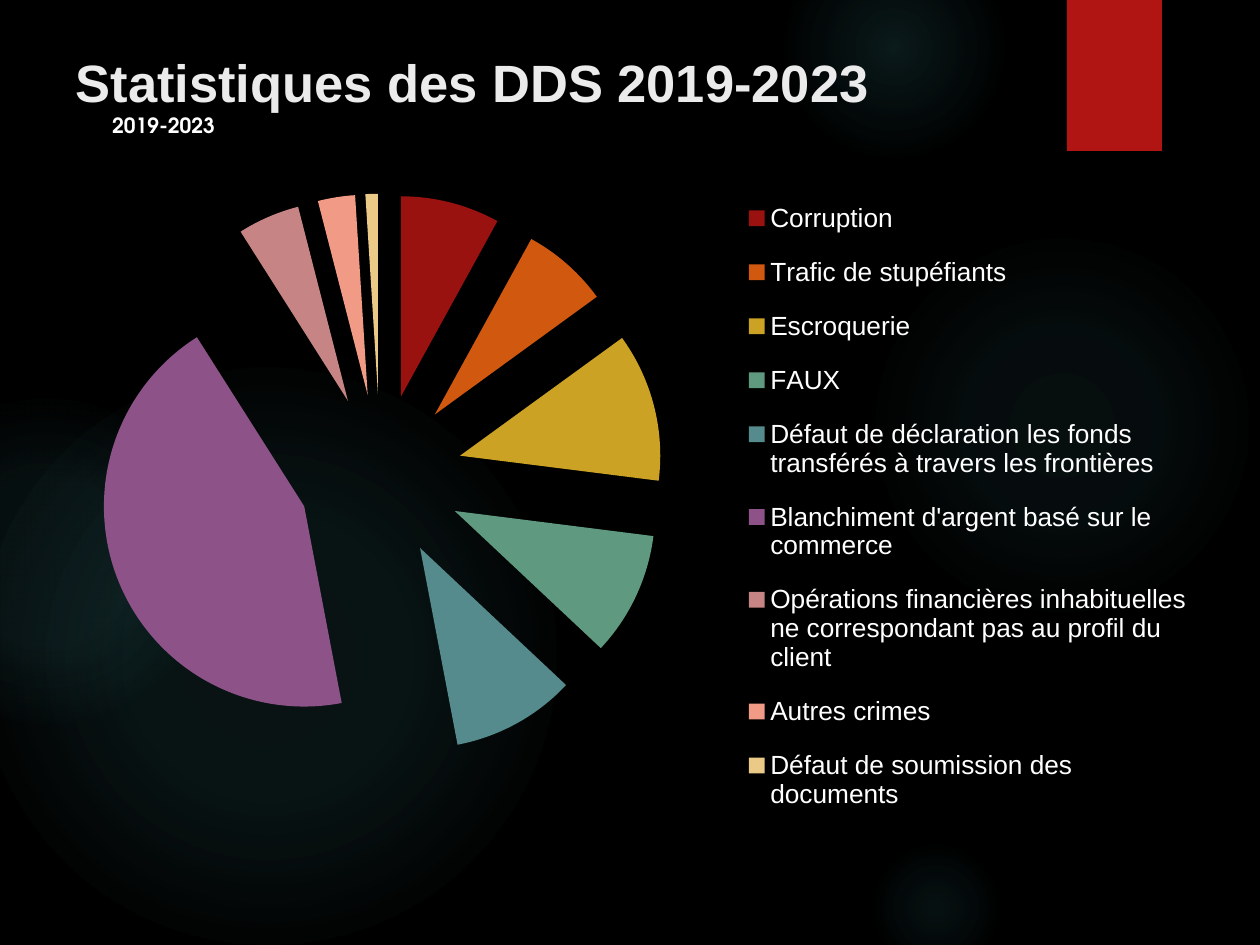
from lxml import etree
from pptx import Presentation, util as u
from pptx.chart.data import CategoryChartData
from pptx.dml.color import RGBColor
from pptx.enum import chart as ch, shapes, text
from pptx.oxml import parse_xml
from pptx.oxml.ns import nsdecls, qn

# Content
TITLE = "Statistiques des DDS 2019-2023"
CHART_TITLE = "2019-2023"
SLICES = [  # category, value, colour
    ("Corruption", 8, "9A1210"),
    ("Trafic de stupéfiants", 7, "D0580F"),
    ("Escroquerie", 12, "CCA224"),
    ("FAUX", 10, "5F997F"),
    ("Défaut de déclaration les fonds transférés à travers les frontières", 10, "558B8C"),
    ("Blanchiment d'argent basé sur le commerce", 44, "8D5389"),
    ("Opérations financières inhabituelles ne correspondant pas au profil du client", 5, "C68584"),
    ("Autres crimes", 3, "F19B87"),
    ("Défaut de soumission des documents", 1, "EBCA88"),
]
EXPLOSION = 41

THEME = dict(bg="000000", glow="50B9C1", tab="B01513", title="EBEBEB", text="FFFFFF",
             font="Arial", chart_font="TeX Gyre Adventor",
             title_size=30, chart_title_size=12, legend_size=15)

# Places in px: left, top, width, height
SLIDE = (1260, 945)
TITLE_BOX = (63, 38, 1134, 87)
TAB_BOX = (1067, 0, 95, 151)
CHART_BOX = (63, 96, 1134, 753)
GLOWS = [  # left, top, diameter, (stop %, opacity %)
    (868, 231, 388, [(0, 7), (36, 6), (69, 0)]),
    (784, -63, 220, [(0, 14), (36, 7), (73, 0)]),
    (868, 840, 136, [(0, 9), (36, 5), (66, 0)]),
    (-21, 368, 577, [(0, 11), (36, 10), (75, 0)]),
    (-116, 399, 325, [(0, 8), (36, 8), (72, 0)]),
]
# Shares of the chart frame: x, y[, w, h]
PLOT_PART = (0.03, 0.13, 0.5, 0.75)
TITLE_PART = (0.04, 0.02)
LEGEND_PART = (0.6, 0.11, 0.4, 0.87)


def px(*values):
    return [u.Emu(round(v * 914400 / 126)) for v in values]


def rgb(name):
    return RGBColor.from_string(THEME[name])


def style(font, size, color, name, bold=False):
    font.size, font.name, font.bold = u.Pt(size), THEME[name], bold
    font.color.rgb = rgb(color)


def add_plain(slide, kind, box):
    sp = slide.shapes.add_shape(kind, *px(*box))
    sp.shadow.inherit = False
    sp.line.fill.background()
    return sp


def fill_glow(sp, stops):
    gs = "".join(f'<a:gs pos="{pos * 1000}"><a:srgbClr val="{THEME["glow"]}">'
                 f'<a:alpha val="{alpha * 1000}"/></a:srgbClr></a:gs>' for pos, alpha in stops)
    grad = parse_xml(f'<a:gradFill {nsdecls("a")}><a:gsLst>{gs}</a:gsLst><a:path path="circle">'
                     '<a:fillToRect l="50000" t="50000" r="50000" b="50000"/></a:path></a:gradFill>')
    sp._element.spPr.find(qn("a:prstGeom")).addnext(grad)


def place(element, index, part, inner=False):
    """Give a chart part a fixed place within the chart frame."""
    for old in element.findall(qn("c:layout")):
        element.remove(old)
    layout = etree.Element(qn("c:layout"))
    manual = etree.SubElement(layout, qn("c:manualLayout"))
    items = [("layoutTarget", "inner")] if inner else []
    items += [("xMode", "edge"), ("yMode", "edge")] + list(zip("xywh", part))
    for tag, value in items:
        etree.SubElement(manual, qn(f"c:{tag}")).set("val", str(value))
    element.insert(index, layout)


def add_background(slide):
    slide.background.fill.solid()
    slide.background.fill.fore_color.rgb = rgb("bg")
    for left, top, size, stops in GLOWS:
        fill_glow(add_plain(slide, shapes.MSO_SHAPE.OVAL, (left, top, size, size)), stops)
    tab = add_plain(slide, shapes.MSO_SHAPE.RECTANGLE, TAB_BOX)
    tab.fill.solid()
    tab.fill.fore_color.rgb = rgb("tab")
    tab._element.spPr.find(qn("a:effectLst")).append(parse_xml(
        f'<a:outerShdw {nsdecls("a")} blurRad="38100" dist="25400" dir="5400000" rotWithShape="0">'
        '<a:srgbClr val="000000"><a:alpha val="45000"/></a:srgbClr></a:outerShdw>'))


def add_title(slide):
    sp = slide.shapes.title
    sp.left, sp.top, sp.width, sp.height = px(*TITLE_BOX)
    slide.shapes._spTree.append(sp._element)  # in front of the background
    tf = sp.text_frame
    tf.vertical_anchor = text.MSO_ANCHOR.MIDDLE
    p = tf.paragraphs[0]
    p.alignment = text.PP_ALIGN.LEFT
    r = p.add_run()
    r.text = TITLE
    style(r.font, THEME["title_size"], "title", "font", True)


def add_pie(slide):
    data = CategoryChartData()
    data.categories = [name for name, _, _ in SLICES]
    data.add_series("Series 1", [value for _, value, _ in SLICES])
    chart = slide.shapes.add_chart(ch.XL_CHART_TYPE.PIE, *px(*CHART_BOX), data).chart
    style(chart.font, 10, "text", "chart_font")

    # Slices
    plot = chart.plots[0]
    plot.vary_by_categories = True
    series = plot.series[0]
    for i, (_, _, color) in enumerate(SLICES):
        fmt = series.points[i].format
        fmt.fill.solid()
        fmt.fill.fore_color.rgb = RGBColor.from_string(color)
        fmt.line.fill.background()
    explosion = etree.Element(qn("c:explosion"))
    explosion.set("val", str(EXPLOSION))
    series._element.find(qn("c:tx")).addnext(explosion)
    place(chart._chartSpace.chart.plotArea, 0, PLOT_PART, inner=True)

    # Chart title
    chart.has_title = True
    r = chart.chart_title.text_frame.paragraphs[0].add_run()
    r.text = CHART_TITLE
    style(r.font, THEME["chart_title_size"], "text", "chart_font", True)
    place(chart.chart_title._element, 1, TITLE_PART)

    # Legend
    chart.has_legend = True
    legend = chart.legend
    legend.position = ch.XL_LEGEND_POSITION.RIGHT
    legend.include_in_layout = False
    style(legend.font, THEME["legend_size"], "text", "font")
    place(legend._element, 1, LEGEND_PART)


def main():
    prs = Presentation()
    prs.slide_width, prs.slide_height = px(*SLIDE)
    slide = prs.slides.add_slide(prs.slide_layouts[5])
    add_background(slide)
    add_title(slide)
    add_pie(slide)
    prs.save("out.pptx")


if __name__ == "__main__":
    main()
